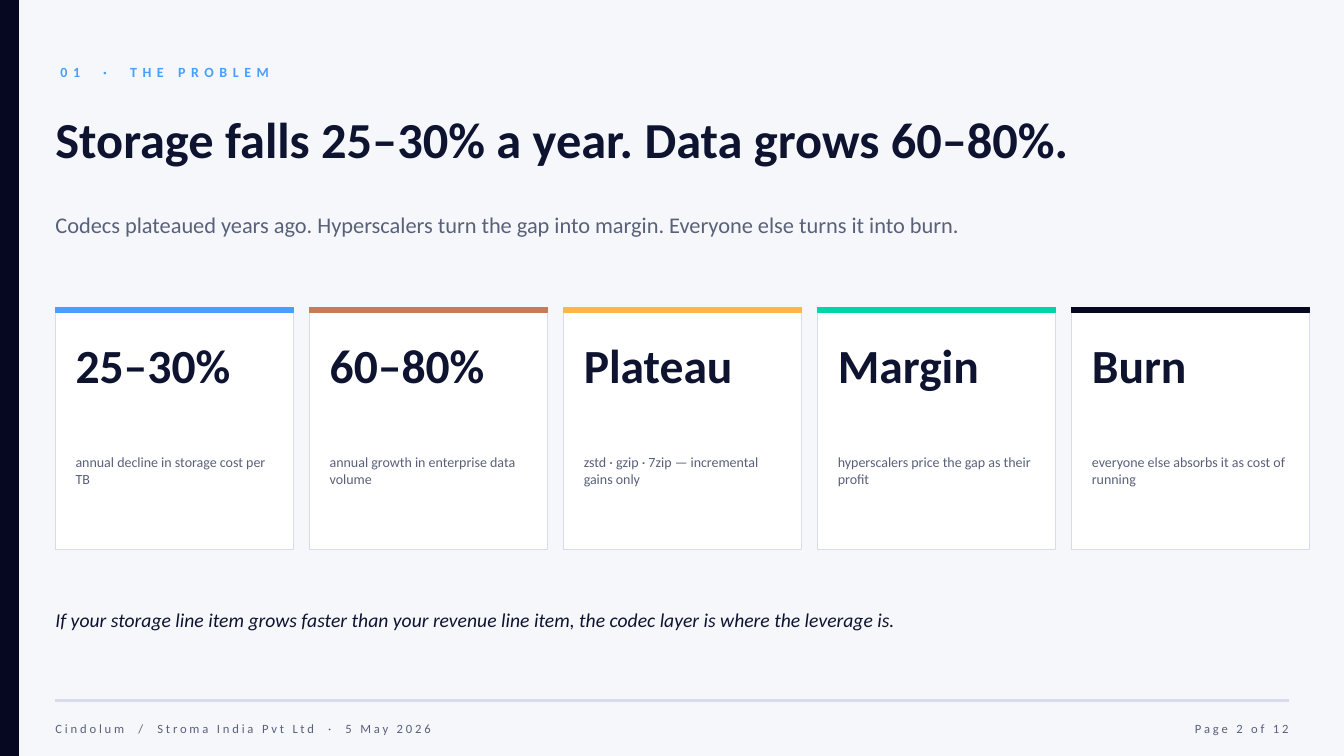
import pptx
import pptx.dml.color
import pptx.enum.shapes
import pptx.enum.text
import pptx.oxml
import pptx.util

Inches = pptx.util.Inches
RGBColor = pptx.dml.color.RGBColor
Align = pptx.enum.text.PP_ALIGN
Anchor = pptx.enum.text.MSO_ANCHOR

FONT = "Calibri"
PAPER = RGBColor(0xF5, 0xF7, 0xFB)
NIGHT = RGBColor(0x05, 0x08, 0x20)
INK = RGBColor(0x0E, 0x13, 0x30)
SLATE = RGBColor(0x59, 0x61, 0x7A)
RULE = RGBColor(0xD7, 0xDC, 0xEA)
WHITE = RGBColor(0xFF, 0xFF, 0xFF)
BLUE = RGBColor(0x4A, 0x9E, 0xFF)
CLAY = RGBColor(0xC9, 0x7A, 0x59)
AMBER = RGBColor(0xFF, 0xB5, 0x47)
TEAL = RGBColor(0x00, 0xD4, 0xAA)

MARGIN = 0.55
CARD_TOP = 3.05
CARD_WIDTH = 2.36
CARD_HEIGHT = 2.4
CARD_GAP = 0.16
CARD_PADDING = 0.2

CARDS = [
    ("25–30%", "annual decline in storage cost per TB", BLUE),
    ("60–80%", "annual growth in enterprise data volume", CLAY),
    ("Plateau", "zstd · gzip · 7zip — incremental gains only", AMBER),
    ("Margin", "hyperscalers price the gap as their profit", TEAL),
    ("Burn", "everyone else absorbs it as cost of running", NIGHT),
]


def add_text(page, text, left, top, width, height, *, size, color=SLATE, bold=False,
             italic=False, tracking=0, align=Align.LEFT, anchor=Anchor.MIDDLE):
    """Add a text box without insets, holding one formatted paragraph."""
    box = page.shapes.add_textbox(Inches(left), Inches(top), Inches(width), Inches(height))
    frame = box.text_frame
    frame.word_wrap = True
    frame.vertical_anchor = anchor
    frame.margin_left = frame.margin_top = frame.margin_right = frame.margin_bottom = 0
    para = frame.paragraphs[0]
    para.alignment = align
    span = para.add_run()
    span.text = text
    span.font.name = FONT
    span.font.size = pptx.util.Pt(size)
    span.font.bold = bold
    span.font.italic = italic
    span.font.color.rgb = color
    if tracking:
        span.font._element.set("spc", str(tracking * 100))


def add_panel(page, left, top, width, height, fill, line, line_width=1):
    """Add a flat rectangle with a solid fill and outline."""
    panel = page.shapes.add_shape(pptx.enum.shapes.MSO_SHAPE.RECTANGLE, Inches(left),
                                  Inches(top), Inches(width), Inches(height))
    panel.shadow.inherit = False
    panel.fill.solid()
    panel.fill.fore_color.rgb = fill
    panel.line.color.rgb = line
    panel.line.width = pptx.util.Pt(line_width)


def add_rule(page, left, top, width):
    """Add a thin horizontal line."""
    rule = page.shapes.add_connector(pptx.enum.shapes.MSO_CONNECTOR.STRAIGHT, Inches(left),
                                     Inches(top), Inches(left + width), Inches(top))
    rule.line.color.rgb = RULE
    rule.line.width = pptx.util.Pt(1.75)
    rule._element.spPr.append(pptx.oxml.parse_xml(
        '<a:effectLst xmlns:a="http://schemas.openxmlformats.org/drawingml/2006/main"/>'))


def add_card(page, left, headline, caption, accent):
    """Add a white card with an accent strip, a headline and a caption."""
    text_left = left + CARD_PADDING
    text_width = CARD_WIDTH - 2 * CARD_PADDING
    add_panel(page, left, CARD_TOP, CARD_WIDTH, CARD_HEIGHT, WHITE, RULE, 0.75)
    add_panel(page, left, CARD_TOP, CARD_WIDTH, 0.05, accent, accent)
    add_text(page, headline, text_left, 3.33, text_width, 1.32,
             size=34, color=INK, bold=True, anchor=Anchor.TOP)
    add_text(page, caption, text_left, 4.5, text_width, 0.8, size=10, anchor=Anchor.TOP)


def add_header(page):
    """Add the section label, title and subtitle."""
    add_text(page, "01  ·  THE PROBLEM", 0.6, 0.55, 8, 0.32,
             size=10, color=BLUE, bold=True, tracking=4)
    add_text(page, "Storage falls 25–30% a year. Data grows 60–80%.",
             MARGIN, 0.9, 12.2, 0.95, size=36, color=INK, bold=True)
    add_text(page, "Codecs plateaued years ago. Hyperscalers turn the gap into margin. "
             "Everyone else turns it into burn.", MARGIN, 1.95, 12.2, 0.55, size=16)


def add_footer(page):
    """Add the footer rule, owner line and page number."""
    add_rule(page, MARGIN, 6.95, 12.23)
    add_text(page, "Cindolum  /  Stroma India Pvt Ltd  ·  5 May 2026",
             MARGIN, 7.08, 8, 0.3, size=9, tracking=2)
    add_text(page, "Page 2 of 12", 10.28, 7.08, 2.5, 0.3,
             size=9, tracking=2, align=Align.RIGHT)


def main():
    """Build the slide and save the deck."""
    deck = pptx.Presentation()
    deck.slide_width = Inches(13.33)
    deck.slide_height = Inches(7.5)
    page = deck.slides.add_slide(deck.slide_layouts[6])
    page.background.fill.solid()
    page.background.fill.fore_color.rgb = PAPER

    add_panel(page, 0, 0, 0.18, 7.5, NIGHT, NIGHT)
    add_header(page)
    for index, (headline, caption, accent) in enumerate(CARDS):
        left = MARGIN + index * (CARD_WIDTH + CARD_GAP)
        add_card(page, left, headline, caption, accent)
    add_text(page, "If your storage line item grows faster than your revenue line item, "
             "the codec layer is where the leverage is.", MARGIN, 5.85, 12.2, 0.6,
             size=14, color=INK, italic=True)
    add_footer(page)
    deck.save("out.pptx")


if __name__ == "__main__":
    main()
